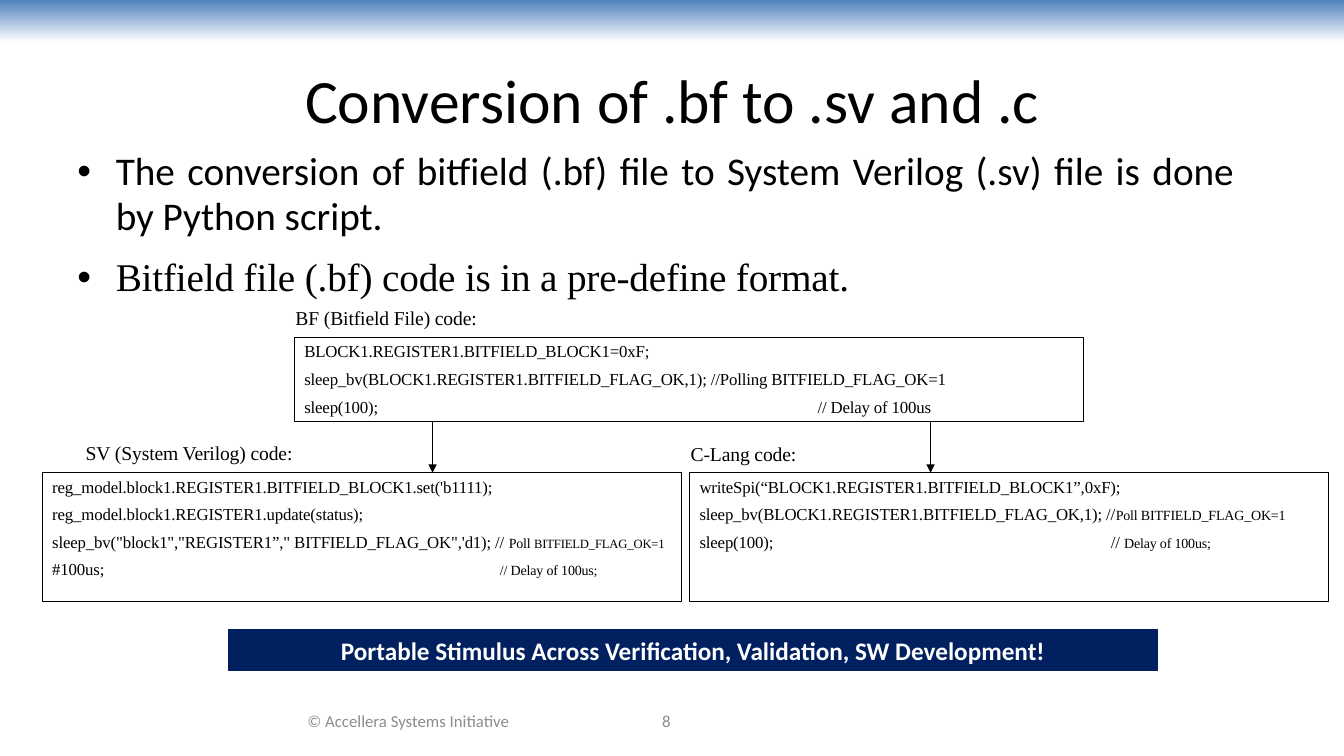
from lxml import etree
from pptx import Presentation
from pptx.dml.color import RGBColor
from pptx.enum import shapes, text
from pptx.oxml import ns
from pptx.util import Inches, Pt

# Content: each code line is a list of (words, size) parts; a tab starts a remark
TITLE = "Conversion of .bf to .sv and .c"
BULLETS = [
    ("The conversion of bitfield (.bf) file to System Verilog (.sv) file is done by Python script.",
     "Calibri", 0),
    ("Bitfield file (.bf) code is in a pre-define format.", "Times New Roman", -0.1),
]
BF_CODE = [
    [("BLOCK1.REGISTER1.BITFIELD_BLOCK1=0xF;", 12)],
    [("sleep_bv(BLOCK1.REGISTER1.BITFIELD_FLAG_OK,1); //Polling BITFIELD_FLAG_OK=1", 12)],
    [("sleep(100);\t// Delay of 100us", 12)],
]
SV_CODE = [
    [("reg_model.block1.REGISTER1.BITFIELD_BLOCK1.set('b1111);", 12)],
    [("reg_model.block1.REGISTER1.update(status);", 12)],
    [("sleep_bv(\"block1\",\"REGISTER1”,\" BITFIELD_FLAG_OK\",'d1); // ", 12),
     ("Poll ", 10), ("BITFIELD_FLAG_OK=1", 9)],
    [("#100us;\t", 12), ("// Delay of 100us;", 10)],
]
C_CODE = [
    [("writeSpi(“BLOCK1.REGISTER1.BITFIELD_BLOCK1”,0xF);", 12)],
    [("sleep_bv(BLOCK1.REGISTER1.BITFIELD_FLAG_OK,1); //", 12), ("Poll BITFIELD_FLAG_OK=1", 10)],
    [("sleep(100);\t// ", 12), ("Delay of 100us;", 10)],
]
MESSAGE = "Portable Stimulus Across Verification, Validation, SW Development!"

BLACK = RGBColor(0, 0, 0)
WHITE = RGBColor(255, 255, 255)
GREY = RGBColor(0x8C, 0x8C, 0x8C)
NAVY = RGBColor(0x00, 0x20, 0x60)
BLUE = RGBColor(0x4F, 0x81, 0xBD)
SANS, SERIF = "Calibri", "Times New Roman"

# Layout in inches: one wide code panel above two equal ones
WIDTH, HEIGHT = 13.33, 7.5
PANEL_LEFT, PANEL_WIDTH, PANEL_GAP = 0.42, 6.34, 0.08
C_LEFT = PANEL_LEFT + PANEL_WIDTH + PANEL_GAP
BF_TOP, BF_HEIGHT = 3.35, 0.83
BF_BOTTOM, PANEL_TOP, PANEL_HEIGHT = BF_TOP + BF_HEIGHT, 4.69, 1.28
# code, left, top, width, height, offset of the remark
PANELS = [
    (BF_CODE, 2.92, BF_TOP, 7.83, BF_HEIGHT, 5.09),
    (C_CODE, C_LEFT, PANEL_TOP, PANEL_WIDTH, PANEL_HEIGHT, 4.08),
    (SV_CODE, PANEL_LEFT, PANEL_TOP, PANEL_WIDTH, PANEL_HEIGHT, 4.44),
]
LABELS = [
    ("BF (Bitfield File) code:", 2.93, 3.05),
    ("SV (System Verilog) code:", 0.85, 4.39),
    ("C-Lang code:", 6.85, 4.4),
]
FOOTERS = [("© Accellera Systems Initiative", 2.44, 3.22), ("8", 5.33, 2.56)]
ARROWS = [4.29, 9.23]


def inches(*lengths):
    return [Inches(length) for length in lengths]


def style(span, size, name=SERIF, color=BLACK, bold=False, spacing=0.0):
    font = span.font
    font.size, font.name, font.bold = Pt(size), name, bold
    font.color.rgb = color
    if spacing:
        span._r.get_or_add_rPr().set("spc", str(round(spacing * 100)))


def add_box(page, *place):
    box = page.shapes.add_textbox(*inches(*place))
    box.text_frame.word_wrap = True
    return box


def add_rectangle(page, *place):
    box = page.shapes.add_shape(shapes.MSO_SHAPE.RECTANGLE, *inches(*place))
    box.shadow.inherit = False
    return box


def add_panel(page, code, left, top, width, height, remark):
    box = add_rectangle(page, left, top, width, height)
    box.fill.solid()
    box.fill.fore_color.rgb = WHITE
    box.line.color.rgb = BLACK
    box.line.width = Pt(0.5)
    frame = box.text_frame
    frame.word_wrap = True
    frame.vertical_anchor = text.MSO_ANCHOR.TOP
    for number, parts in enumerate(code):
        para = frame.add_paragraph() if number else frame.paragraphs[0]
        para.alignment = text.PP_ALIGN.LEFT
        para.line_spacing, para.space_after = 0.95, Pt(6)
        tabs = etree.SubElement(para._p.get_or_add_pPr(), ns.qn("a:tabLst"))
        etree.SubElement(tabs, ns.qn("a:tab"), pos=str(Inches(remark)), algn="l")
        for words, size in parts:
            span = para.add_run()
            span.text = words
            style(span, size, spacing=-0.1)


def add_arrow(page, x):
    arrow = page.shapes.add_connector(
        shapes.MSO_CONNECTOR.STRAIGHT, *inches(x, BF_BOTTOM, x, PANEL_TOP))
    arrow.line.color.rgb = BLACK
    arrow.line.width = Pt(0.75)
    etree.SubElement(arrow.line._get_or_add_ln(), ns.qn("a:tailEnd"), type="triangle")
    etree.SubElement(arrow._element.spPr, ns.qn("a:effectLst"))


def main():
    deck = Presentation()
    deck.slide_width, deck.slide_height = inches(WIDTH, HEIGHT)
    page = deck.slides.add_slide(deck.slide_layouts[5])

    # Band along the top edge
    band = add_rectangle(page, 0, 0, WIDTH, 0.42)
    band.line.fill.background()
    band.fill.gradient()
    band.fill.gradient_angle = 270
    for stop, color, position in zip(band.fill.gradient_stops, (BLUE, WHITE), (0, 1)):
        stop.color.rgb = color
        stop.position = position

    # Title
    title = page.shapes.title
    title.left, title.top, title.width, title.height = inches(0.67, 0.3, 12, 1.25)
    frame = title.text_frame
    frame.text = TITLE
    frame.auto_size = text.MSO_AUTO_SIZE.NONE
    frame.vertical_anchor = text.MSO_ANCHOR.MIDDLE
    para = frame.paragraphs[0]
    para.alignment, para.line_spacing = text.PP_ALIGN.CENTER, 1.15
    style(para.runs[0], 44, SANS)

    # Bullets
    frame = add_box(page, 0.67, 1.44, 11.67, 5.38).text_frame
    for number, (words, name, spacing) in enumerate(BULLETS):
        para = frame.add_paragraph() if number else frame.paragraphs[0]
        para.text = words
        para.alignment = text.PP_ALIGN.JUSTIFY
        para.line_spacing, para.space_after = 0.95, Pt(6)
        if number:
            para.space_before = Pt(5.6)
        layout = para._p.get_or_add_pPr()
        layout.set("marL", str(Inches(0.38)))
        layout.set("indent", str(Inches(-0.38)))
        etree.SubElement(layout, ns.qn("a:buFont"), typeface="Arial")
        etree.SubElement(layout, ns.qn("a:buChar"), char="•")
        style(para.runs[0], 28, name, spacing=spacing)

    # Code panels, their labels and the arrows between them
    for panel in PANELS:
        add_panel(page, *panel)
    for x in ARROWS:
        add_arrow(page, x)
    for words, left, top in LABELS:
        frame = add_box(page, left, top, 3.82, 0.22).text_frame
        frame.margin_left = frame.margin_right = frame.margin_top = frame.margin_bottom = 0
        frame.text = words
        frame.paragraphs[0].line_spacing = 0.95
        style(frame.paragraphs[0].runs[0], 14, spacing=-0.1)

    # Message bar
    bar = add_rectangle(page, 2.25, 6.23, 9.25, 0.44)
    bar.fill.solid()
    bar.fill.fore_color.rgb = NAVY
    bar.line.color.rgb = WHITE
    bar.line.width = Pt(2)
    bar.text_frame.text = MESSAGE
    bar.text_frame.paragraphs[0].alignment = text.PP_ALIGN.CENTER
    style(bar.text_frame.paragraphs[0].runs[0], 18, SANS, WHITE, bold=True)

    # Footer
    for words, left, width in FOOTERS:
        frame = add_box(page, left, 6.95, width, 0.4).text_frame
        frame.text = words
        frame.vertical_anchor = text.MSO_ANCHOR.MIDDLE
        frame.paragraphs[0].alignment = text.PP_ALIGN.CENTER
        style(frame.paragraphs[0].runs[0], 12, SANS, GREY)

    deck.save("out.pptx")


if __name__ == "__main__":
    main()
